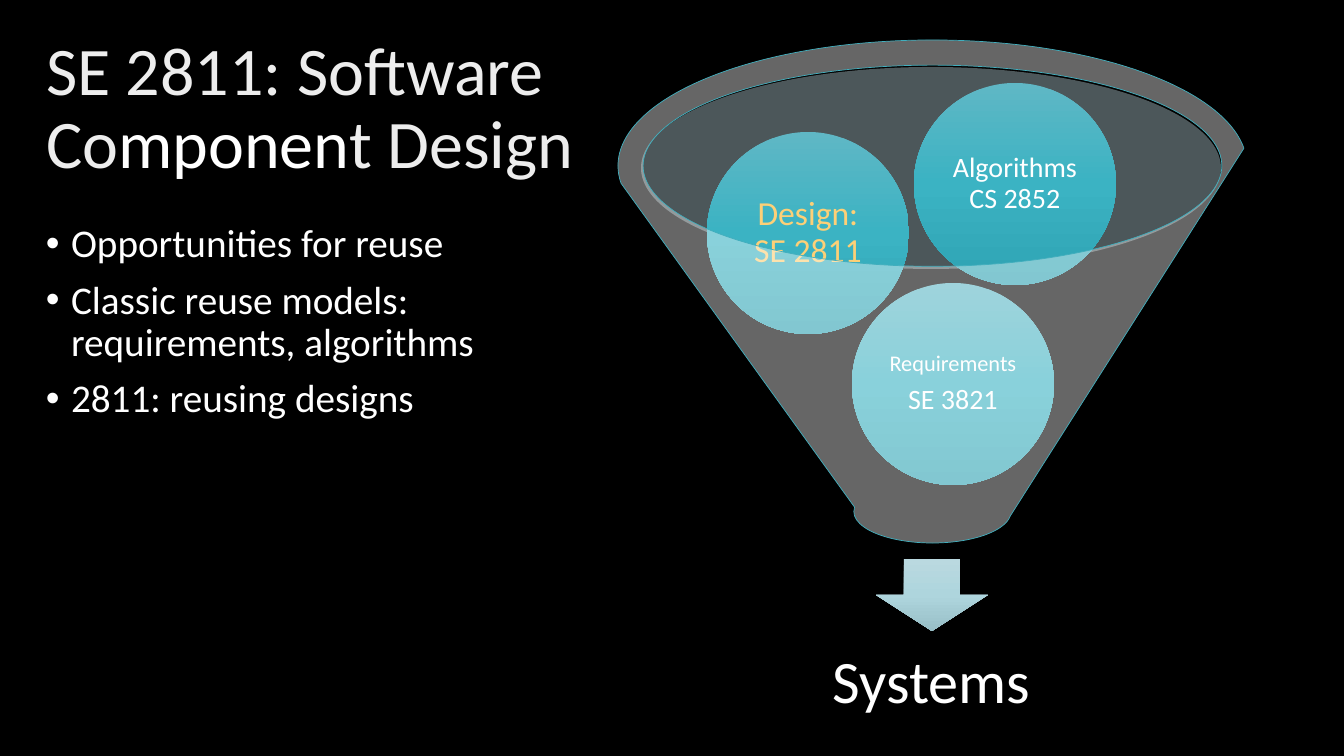
import copy

import pptx
import pptx.dml.color
import pptx.enum.shapes
import pptx.enum.text
import pptx.oxml.ns
import pptx.oxml.xmlchemy
import pptx.util
from lxml import etree

PX = 12192000 / 1344
FONT = "Calibri"
COLORS = {
    "black": "000000", "white": "FFFFFF", "title": "EDEDED", "gold": "FDD077",
    "rim": "C0DBE1", "outline": "41AEBD",
}
CIRCLE_GRADIENT = ["5FB7C5", "3BB3C3", "2FA3B3"]
ARROW_GRADIENT = ["BAD9E0", "AED5DD", "98BFC7"]
SHAPES = pptx.enum.shapes.MSO_SHAPE
ALIGN = pptx.enum.text.PP_ALIGN
MIDDLE = pptx.enum.text.MSO_ANCHOR.MIDDLE
rgb = pptx.dml.color.RGBColor.from_string
qn = pptx.oxml.ns.qn


def add_filled_shape(kind, box, colors, opacity=100):
    shape = slide.shapes.add_shape(kind, *[round(value * PX) for value in box])
    shape.shadow.inherit = False
    shape.line.fill.background()
    if len(colors) == 1:
        shape.fill.solid()
        shape.fill.fore_color.rgb = rgb(colors[0])
        color_element = shape._element.spPr.find(".//" + qn("a:srgbClr"))
        etree.SubElement(color_element, qn("a:alpha"), val=str(opacity * 1000))
    else:
        shape.fill.gradient()
        shape.fill.gradient_angle = 270
        stop_list = shape._element.spPr.find(".//" + qn("a:gsLst"))
        stop_list.insert(1, copy.deepcopy(stop_list[0]))
        for index, stop in enumerate(shape.fill.gradient_stops):
            stop.position = index / 2
            stop.color.rgb = rgb(colors[index])
    return shape


def write_centred(shape, lines, color, inset):
    frame = shape.text_frame
    frame.word_wrap = True
    frame.vertical_anchor = MIDDLE
    frame.margin_left = frame.margin_right = round(inset * PX)
    frame.margin_top = frame.margin_bottom = round(inset * PX)
    frame.text = "\n".join(text for text, size in lines)
    for paragraph, (text, size) in zip(frame.paragraphs, lines):
        paragraph.alignment = ALIGN.CENTER
        paragraph.line_spacing = 0.9
        paragraph.space_after = pptx.util.Pt(round(size * 0.35))
        paragraph.font.size = pptx.util.Pt(size)
        paragraph.font.name = FONT
        paragraph.font.color.rgb = rgb(COLORS[color])


presentation = pptx.Presentation()
presentation.slide_width = round(1344 * PX)
presentation.slide_height = round(756 * PX)
slide = presentation.slides.add_slide(presentation.slide_layouts[5])
slide.background.fill.solid()
slide.background.fill.fore_color.rgb = rgb(COLORS["black"])

title = slide.shapes.title
title.left, title.top, title.width, title.height = [round(value * PX) for value in (36, 37, 593, 146)]
title.text_frame.auto_size = pptx.enum.text.MSO_AUTO_SIZE.NONE
title.text_frame.word_wrap = True
title.text_frame.vertical_anchor = MIDDLE
paragraph = title.text_frame.paragraphs[0]
paragraph.alignment = ALIGN.LEFT
paragraph.line_spacing = 0.9
for text, color in [("SE 2811: Software Co", "title"), ("mponen", "white"), ("t Design", "title")]:
    run = paragraph.add_run()
    run.text = text
    run.font.size = pptx.util.Pt(48.6)
    run.font.name = FONT
    run.font.color.rgb = rgb(COLORS[color])

body = slide.shapes.add_textbox(*[round(value * PX) for value in (36, 219, 482, 480)])
body.text_frame.word_wrap = True
body.text_frame.text = "\n".join([
    "Opportunities for reuse",
    "Classic reuse models: requirements, algorithms",
    "2811: reusing designs",
])
for index, paragraph in enumerate(body.text_frame.paragraphs):
    properties = paragraph._p.get_or_add_pPr()
    properties.set("marL", "228600")
    properties.set("indent", "-228600")
    etree.SubElement(properties, qn("a:buFont"), typeface="Arial")
    etree.SubElement(properties, qn("a:buChar"), char="•")
    paragraph.line_spacing = 0.9
    if index:
        paragraph.space_before = pptx.util.Pt(10)
    paragraph.font.size = pptx.util.Pt(28)
    paragraph.font.name = FONT
    paragraph.font.color.rgb = rgb(COLORS["white"])

add_filled_shape(SHAPES.OVAL, (641, 67, 580, 202), [COLORS["rim"]], 40)
add_filled_shape(SHAPES.DOWN_ARROW, (876, 559, 112, 72), ARROW_GRADIENT)
systems = slide.shapes.add_textbox(*[round(value * PX) for value in (662, 617, 539, 135)])
write_centred(systems, [("Systems", 43)], "white", 33)

courses = [
    (852, 283, [("Requirements", 16), ("SE 3821", 20)], "white"),
    (707, 132, [("Design: SE 2811", 24)], "gold"),
    (914, 83, [("Algorithms CS 2852", 20)], "white"),
]
for left, top, lines, color in courses:
    circle = add_filled_shape(SHAPES.OVAL, (left, top, 202, 202), CIRCLE_GRADIENT)
    write_centred(circle, lines, color, 3)

funnel = add_filled_shape(SHAPES.FUNNEL, (618, 40, 629, 503), [COLORS["white"]], 40)
funnel.line.color.rgb = rgb(COLORS["outline"])
funnel.line.width = pptx.util.Pt(0.5)

presentation.save("out.pptx")
